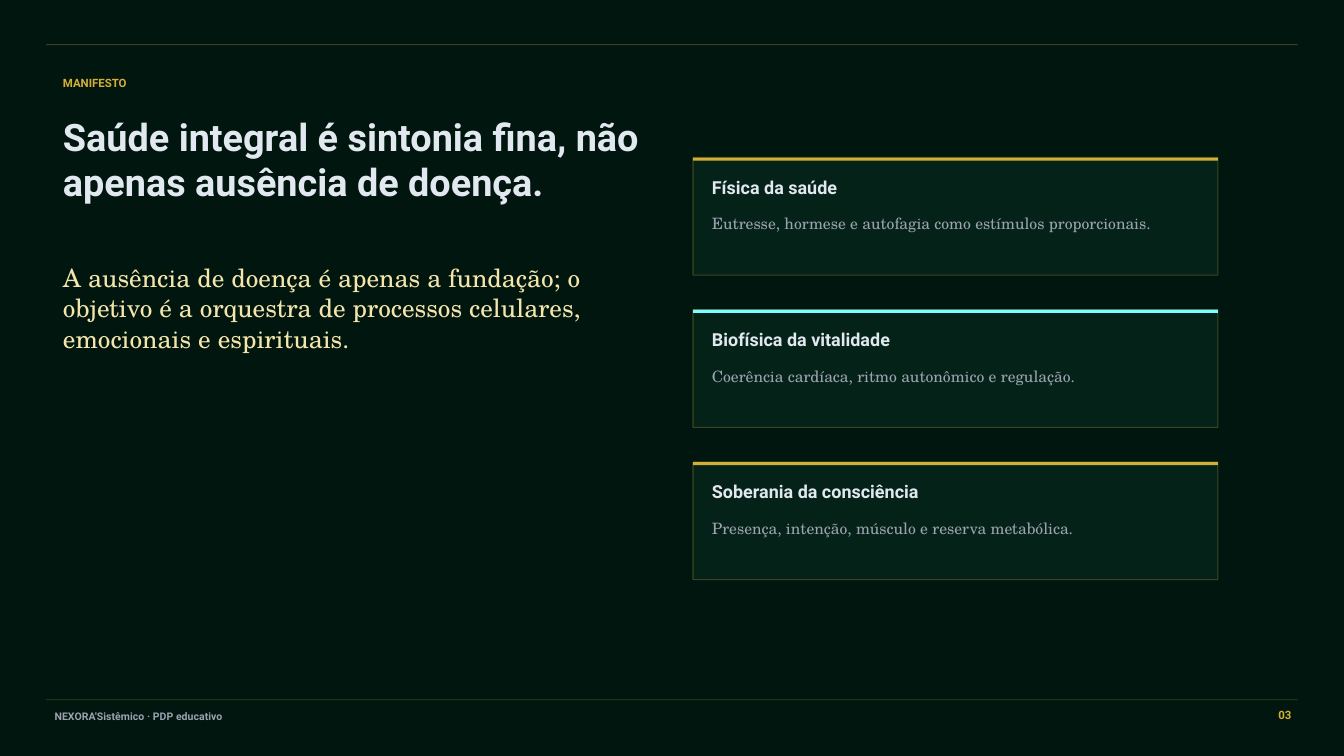
from dataclasses import dataclass

from lxml import etree
from pptx import Presentation
from pptx.dml.color import RGBColor
from pptx.enum.shapes import MSO_SHAPE
from pptx.enum.text import MSO_ANCHOR, PP_ALIGN
from pptx.oxml.ns import qn
from pptx.util import Pt

RECTANGLE = MSO_SHAPE.RECTANGLE
TOP = MSO_ANCHOR.TOP
LEFT, RIGHT = PP_ALIGN.LEFT, PP_ALIGN.RIGHT

EMU_PER_PX = 9525
PAGE_WIDTH, PAGE_HEIGHT = 1280, 720
CARD_LEFT, CARD_TOP, CARD_WIDTH, CARD_HEIGHT = 660, 150, 500, 112
CARD_PITCH, CARD_PADDING, ACCENT_HEIGHT = 145, 18, 3
RULE_ALPHA, CARD_ALPHA = 27, 67

COLORS = {
    "background": "01160F",
    "card": "08291F",
    "gold": "D4AF37",
    "cyan": "7FFCFF",
    "cream": "F3E5AB",
    "light": "E2E8F0",
    "muted": "9CA3AF",
}
SANS, SERIF = "Roboto", "TeX Gyre Schola"


@dataclass(frozen=True)
class Box:
    left: int
    top: int
    width: int
    height: int

    def emu(self) -> list[int]:
        return [px * EMU_PER_PX for px in (self.left, self.top, self.width, self.height)]


@dataclass(frozen=True)
class Style:
    font: str
    size: float
    color: str
    bold: bool = False


@dataclass(frozen=True)
class Label:
    text: str
    box: Box
    style: Style
    align: PP_ALIGN = LEFT


@dataclass(frozen=True)
class Card:
    title: str
    body: str
    accent: str


EYEBROW = Style(SANS, 8.2, "gold", True)
HEADLINE = Style(SANS, 27, "light", True)
LEAD = Style(SERIF, 18, "cream")
CARD_TITLE = Style(SANS, 12.8, "light", True)
CARD_BODY = Style(SERIF, 11.2, "muted")
FOOTER = Style(SANS, 7.5, "muted", True)

RULES = [Box(44, top, 1192, 1) for top in (42, 666)]
INTRO = [
    Label("MANIFESTO", Box(60, 72, 520, 22), EYEBROW),
    Label("Saúde integral é sintonia fina, não apenas ausência de doença.",
          Box(60, 108, 590, 132), HEADLINE),
    Label("A ausência de doença é apenas a fundação; o objetivo é a orquestra "
          "de processos celulares, emocionais e espirituais.",
          Box(60, 250, 520, 180), LEAD),
]
CARDS = [
    Card("Física da saúde",
         "Eutresse, hormese e autofagia como estímulos proporcionais.", "gold"),
    Card("Biofísica da vitalidade",
         "Coerência cardíaca, ritmo autonômico e regulação.", "cyan"),
    Card("Soberania da consciência",
         "Presença, intenção, músculo e reserva metabólica.", "gold"),
]
FOOTER_LABELS = [
    Label("NEXORA'Sistêmico · PDP educativo", Box(52, 676, 520, 18), FOOTER),
    Label("03", Box(1190, 674, 40, 18), EYEBROW, RIGHT),
]


def rgb(name: str) -> RGBColor:
    return RGBColor.from_string(COLORS[name])


def set_alpha(parent, percent: int) -> None:
    """Make the solid fill directly under parent translucent."""
    color = parent.find(qn("a:solidFill")).find(qn("a:srgbClr"))
    etree.SubElement(color, qn("a:alpha")).set("val", str(percent * 1000))


def add_panel(page, box: Box, color: str, alpha: int = 100, outlined: bool = False) -> None:
    panel = page.shapes.add_shape(RECTANGLE, *box.emu())
    panel.shadow.inherit = False
    panel.fill.solid()
    panel.fill.fore_color.rgb = rgb(color)
    properties = panel.fill._xPr
    if alpha < 100:
        set_alpha(properties, alpha)
    if outlined:
        panel.line.color.rgb = rgb("gold")
        panel.line.width = Pt(0.75)
        set_alpha(properties.find(qn("a:ln")), RULE_ALPHA)
    else:
        panel.line.fill.background()


def add_label(page, label: Label) -> None:
    frame = page.shapes.add_textbox(*label.box.emu()).text_frame
    frame_format = {
        "word_wrap": True, "vertical_anchor": TOP,
        "margin_left": 0, "margin_top": 0, "margin_right": 0, "margin_bottom": 0,
    }
    for name, value in frame_format.items():
        setattr(frame, name, value)
    para = frame.paragraphs[0]
    para.alignment = label.align
    span = para.add_run()
    span.text = label.text
    style = label.style
    font_format = {"name": style.font, "size": Pt(style.size), "bold": style.bold}
    for name, value in font_format.items():
        setattr(span.font, name, value)
    span.font.color.rgb = rgb(style.color)


def add_card(page, card: Card, top: int) -> None:
    text_left = CARD_LEFT + CARD_PADDING
    text_width = CARD_WIDTH - 2 * CARD_PADDING
    add_panel(page, Box(CARD_LEFT, top, CARD_WIDTH, CARD_HEIGHT), "card", CARD_ALPHA, True)
    add_panel(page, Box(CARD_LEFT, top, CARD_WIDTH, ACCENT_HEIGHT), card.accent)
    add_label(page, Label(card.title, Box(text_left, top + 18, text_width, 26), CARD_TITLE))
    add_label(page, Label(card.body, Box(text_left, top + 54, text_width, 46), CARD_BODY))


def main() -> None:
    deck = Presentation()
    deck.slide_width = PAGE_WIDTH * EMU_PER_PX
    deck.slide_height = PAGE_HEIGHT * EMU_PER_PX
    page = deck.slides.add_slide(deck.slide_layouts[6])

    add_panel(page, Box(0, 0, PAGE_WIDTH, PAGE_HEIGHT), "background")
    for rule in RULES:
        add_panel(page, rule, "gold", RULE_ALPHA)
    for label in INTRO:
        add_label(page, label)
    for index, card in enumerate(CARDS):
        add_card(page, card, CARD_TOP + index * CARD_PITCH)
    for label in FOOTER_LABELS:
        add_label(page, label)

    deck.save("out.pptx")


if __name__ == "__main__":
    main()
